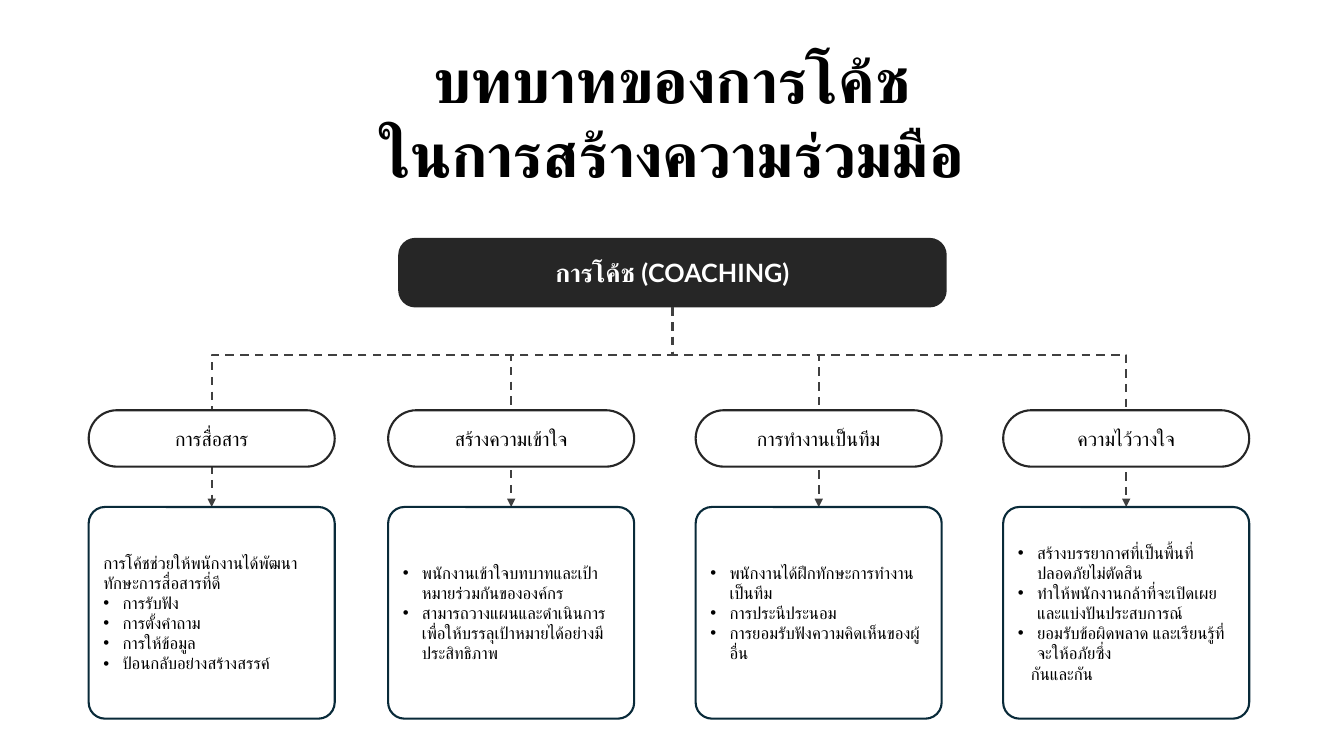
from lxml import etree
from pptx import Presentation
from pptx import util as u
from pptx.dml.color import RGBColor
from pptx.enum import dml, shapes, text
from pptx.oxml.ns import qn

FONT = "Lato"
SLIDE_WIDTH, SLIDE_HEIGHT = 13.33, 7.5
COLUMN_WIDTH = 2.44
PILL_TOP, PILL_HEIGHT = 4.07, 0.56
CARD_TOP, CARD_HEIGHT = 5.03, 2.1
BULLET_INDENT = 0.19

# Each column: left edge, heading, paragraphs as (text, kind)
COLUMNS = [
    (0.88, "การสื่อสาร", [
        ("การโค้ชช่วยให้พนักงานได้พัฒนาทักษะการสื่อสารที่ดี", "plain"),
        ("การรับฟัง", "bullet"),
        ("การตั้งคำถาม", "bullet"),
        ("การให้ข้อมูล", "bullet"),
        ("ป้อนกลับอย่างสร้างสรรค์", "bullet"),
    ]),
    (3.85, "สร้างความเข้าใจ", [
        ("พนักงานเข้าใจบทบาทและเป้าหมายร่วมกันขององค์กร", "bullet"),
        ("สามารถวางแผนและดำเนินการเพื่อให้บรรลุเป้าหมายได้อย่างมีประสิทธิภาพ", "bullet"),
    ]),
    (6.9, "การทำงานเป็นทีม", [
        ("พนักงานได้ฝึกทักษะการทำงานเป็นทีม", "bullet"),
        ("การประนีประนอม", "bullet"),
        ("การยอมรับฟังความคิดเห็นของผู้อื่น", "bullet"),
    ]),
    (9.95, "ความไว้วางใจ", [
        ("สร้างบรรยากาศที่เป็นพื้นที่ปลอดภัยไม่ตัดสิน", "bullet"),
        ("ทำให้พนักงานกล้าที่จะเปิดเผยและแบ่งปันประสบการณ์", "bullet"),
        ("ยอมรับข้อผิดพลาด และเรียนรู้ที่จะให้อภัยซึ่ง", "bullet"),
        ("กันและกัน", "indented"),
    ]),
]


def color(hex_string):
    return RGBColor.from_string(hex_string)


def set_attributes(target, values):
    for name, value in values.items():
        setattr(target, name, value)


def indent_paragraph(paragraph, kind):
    properties = paragraph._p.get_or_add_pPr()
    if kind == "bullet":
        indent = u.Inches(BULLET_INDENT)
        properties.set("marL", str(indent))
        properties.set("indent", str(-indent))
        etree.SubElement(properties, qn("a:buFont")).set("typeface", "Arial")
        etree.SubElement(properties, qn("a:buChar")).set("char", "•")
    elif kind == "indented":
        properties.set("marL", str(u.Inches(0.13)))


def write_text(shape, paragraphs, size, hex_color="000000", bold=False,
               align=text.PP_ALIGN.CENTER, anchor=text.MSO_ANCHOR.MIDDLE):
    frame = shape.text_frame
    set_attributes(frame, {"word_wrap": True, "vertical_anchor": anchor,
                           "auto_size": text.MSO_AUTO_SIZE.NONE})
    for index, (words, kind) in enumerate(paragraphs):
        paragraph = frame.add_paragraph() if index else frame.paragraphs[0]
        paragraph.alignment = align
        indent_paragraph(paragraph, kind)
        run = paragraph.add_run()
        run.text = words
        set_attributes(run.font, {"size": u.Pt(size), "bold": bold, "name": FONT})
        run.font.color.rgb = color(hex_color)
        # Thai letters take the complex-script font
        complex_font = etree.SubElement(run._r.get_or_add_rPr(), qn("a:cs"))
        complex_font.set("typeface", FONT)


def add_rounded_box(slide, box, radius, fill=None, line=None):
    shape = slide.shapes.add_shape(shapes.MSO_SHAPE.ROUNDED_RECTANGLE,
                                   *map(u.Inches, box))
    shape.adjustments[0] = radius
    shape.shadow.inherit = False
    if fill:
        shape.fill.solid()
        shape.fill.fore_color.rgb = color(fill)
    else:
        shape.fill.background()
    if line:
        shape.line.color.rgb = color(line)
        shape.line.width = u.Pt(1.5)
    else:
        shape.line.fill.background()
    return shape


def add_title(slide, box):
    title = slide.shapes.title
    places = map(u.Inches, box)
    set_attributes(title, dict(zip(("left", "top", "width", "height"), places)))
    lines = [("บทบาทของการโค้ช", "plain"), ("ในการสร้างความร่วมมือ", "plain")]
    write_text(title, lines, 44, bold=True, anchor=text.MSO_ANCHOR.TOP)


def add_root(slide, box):
    root = add_rounded_box(slide, box, 0.244, fill="262626")
    write_text(root, [("การโค้ช (COACHING)", "plain")], 18, "FFFFFF", bold=True)


def add_branch(slide, start_x, start_y, end_x, end_y):
    """Elbow arrow that leaves downwards: an elbow turned a quarter."""
    center_x, center_y = (start_x + end_x) / 2, (start_y + end_y) / 2
    half_length, half_spread = (end_y - start_y) / 2, abs(end_x - start_x) / 2
    goes_left = end_x < start_x
    reach = -half_length if goes_left else half_length
    branch = slide.shapes.add_connector(
        shapes.MSO_CONNECTOR.ELBOW,
        u.Inches(center_x + reach), u.Inches(center_y - half_spread),
        u.Inches(center_x - reach), u.Inches(center_y + half_spread))
    branch.line.color.rgb = color("404040")
    set_attributes(branch.line, {"width": u.Pt(1.5),
                                 "dash_style": dml.MSO_LINE.DASH})
    # Quarter turn, bend position, arrowhead and no shadow
    properties = branch._element.spPr
    properties.find(qn("a:xfrm")).set("rot", str((90 if goes_left else 270) * 60000))
    guides = properties.find(qn("a:prstGeom")).find(qn("a:avLst"))
    bend = etree.SubElement(guides, qn("a:gd"))
    bend.set("name", "adj1")
    bend.set("fmla", "val 23700")
    etree.SubElement(properties.find(qn("a:ln")), qn("a:tailEnd")).set("type", "triangle")
    etree.SubElement(properties, qn("a:effectLst"))


def add_column(slide, left, heading, paragraphs):
    # Card with the details
    card = add_rounded_box(slide, (left, CARD_TOP, COLUMN_WIDTH, CARD_HEIGHT),
                           0.077, line="092A39")
    write_text(card, paragraphs, 12, align=text.PP_ALIGN.LEFT)
    # Heading pill over the arrow
    pill = add_rounded_box(slide, (left, PILL_TOP, COLUMN_WIDTH, PILL_HEIGHT),
                           0.5, fill="FFFFFF", line="262626")
    write_text(pill, [(heading, "plain")], 14)


def build_coaching_slide(presentation):
    slide = presentation.slides.add_slide(presentation.slide_layouts[5])
    add_title(slide, (0, 0.37, SLIDE_WIDTH, 1.58))
    root_left, root_top, root_width, root_height = root_box = (3.95, 2.36, 5.44, 0.69)
    add_root(slide, root_box)
    for left, _, _ in COLUMNS:
        add_branch(slide, root_left + root_width / 2, root_top + root_height,
                   left + COLUMN_WIDTH / 2, CARD_TOP)
    for column in COLUMNS:
        add_column(slide, *column)


def main():
    presentation = Presentation()
    set_attributes(presentation, {"slide_width": u.Inches(SLIDE_WIDTH),
                                  "slide_height": u.Inches(SLIDE_HEIGHT)})
    build_coaching_slide(presentation)
    presentation.save("out.pptx")


if __name__ == "__main__":
    main()
